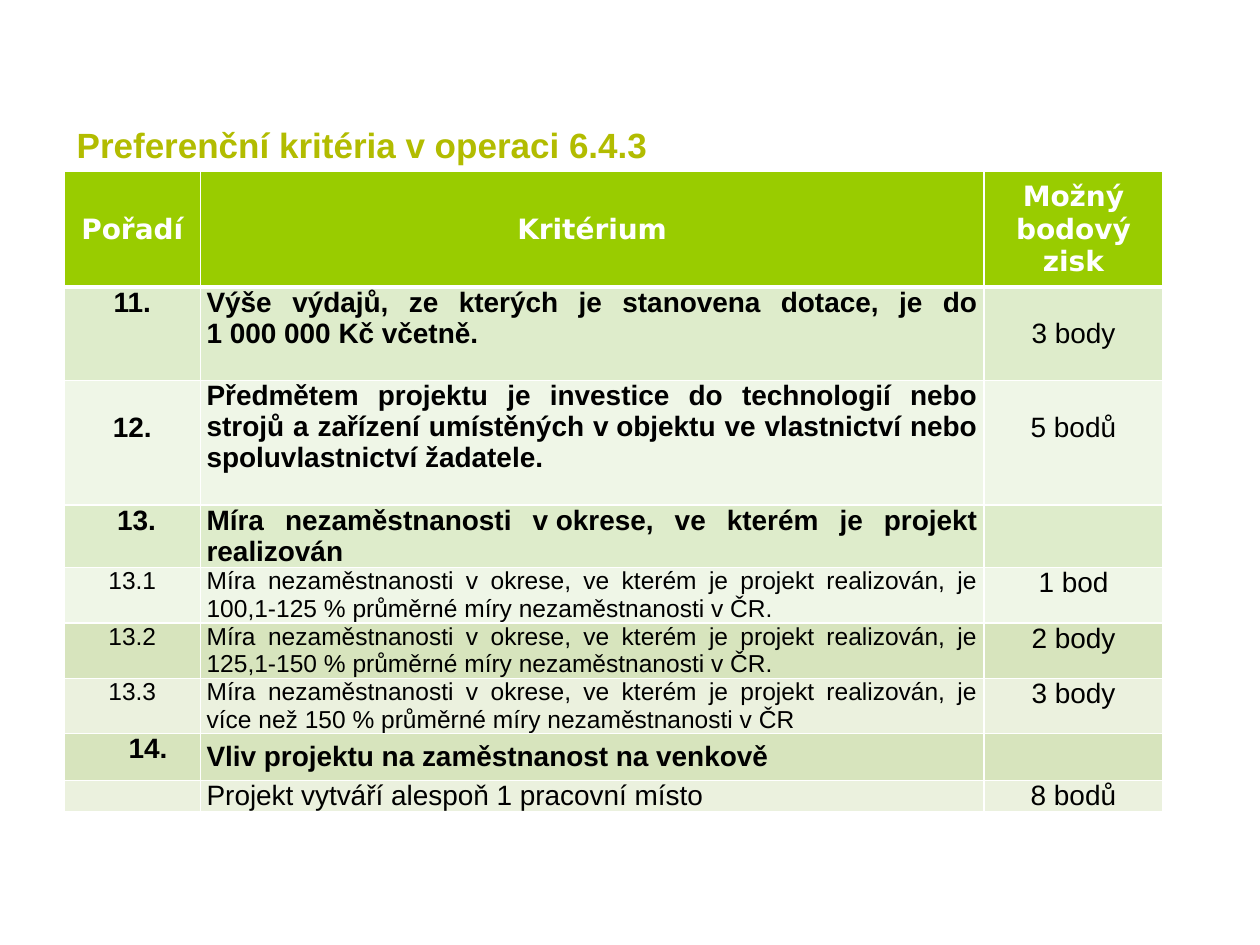
"""Build the slide listing the preference criteria of operation 6.4.3."""
from lxml import etree
from pptx import Presentation
from pptx.dml.color import RGBColor
from pptx.enum.text import MSO_ANCHOR, PP_ALIGN
from pptx.oxml.ns import qn
from pptx.util import Inches, Pt

LEFT, CENTER, JUSTIFY = PP_ALIGN.LEFT, PP_ALIGN.CENTER, PP_ALIGN.JUSTIFY
TOP, MIDDLE, BOTTOM = MSO_ANCHOR.TOP, MSO_ANCHOR.MIDDLE, MSO_ANCHOR.BOTTOM

BLACK = RGBColor(0x00, 0x00, 0x00)
WHITE = RGBColor(0xFF, 0xFF, 0xFF)
OLIVE = RGBColor(0xB2, 0xBC, 0x00)
GREEN = RGBColor(0x99, 0xCC, 0x00)
MINT = RGBColor(0xDE, 0xEC, 0xCB)
PALE_MINT = RGBColor(0xEF, 0xF6, 0xE7)
SAGE = RGBColor(0xD7, 0xE4, 0xBD)
PALE_SAGE = RGBColor(0xEB, 0xF1, 0xDE)

THIN, THICK = 0.91, 2.95
LINE_HEIGHT = 0.25
COLUMN_WIDTHS = (1.08, 6.22, 1.42)
HEADINGS = ("Pořadí", "Kritérium", "Možný bodový zisk")
HEADING_HEIGHT = 0.92

DISTRICT = "Míra nezaměstnanosti v okrese, ve kterém je projekt realizován, je "
MAIN = dict(number=dict(bold=True), criterion=dict(bold=True))
SUB = dict(number=dict(size=14), criterion=dict(size=14))
CRITERIA = (
    (0.74, MINT, ("11.", "Výše výdajů, ze kterých je stanovena dotace, je do "
                  "1\u00a0000\u00a0000 Kč včetně.", "3 body"),
     dict(MAIN, points=dict(top=LINE_HEIGHT))),
    (0.99, PALE_MINT, ("12.", "Předmětem projektu je investice do technologií nebo strojů "
                       "a zařízení umístěných v\u00a0objektu ve vlastnictví nebo "
                       "spoluvlastnictví žadatele.", "5 bodů"),
     dict(MAIN, number=dict(bold=True, top=LINE_HEIGHT), points=dict(top=LINE_HEIGHT))),
    (0.49, MINT, ("13.", "Míra nezaměstnanosti v\u00a0okrese, ve kterém je projekt "
                  "realizován", ""),
     dict(MAIN, number=dict(bold=True, align=LEFT, left=0.42))),
    (0.44, PALE_MINT, ("13.1", DISTRICT + "100,1-125 % průměrné míry nezaměstnanosti v ČR.",
                       "1 bod"), SUB),
    (0.44, SAGE, ("13.2", DISTRICT + "125,1-150 % průměrné míry nezaměstnanosti v ČR.",
                  "2 body"), SUB),
    (0.44, PALE_SAGE, ("13.3", DISTRICT + "více než 150\u00a0% průměrné míry "
                       "nezaměstnanosti v ČR", "3 body"), SUB),
    (0.37, SAGE, ("14.", "Vliv projektu na zaměstnanost na venkově", ""),
     dict(number=dict(bold=True, left=0.3), criterion=dict(bold=True, anchor=MIDDLE))),
    (0.24, PALE_SAGE, ("", "Projekt vytváří alespoň 1 pracovní místo", "8 bodů"), {}),
)


def write_text(frame, text, size=16, bold=False, color=BLACK, font="Arial",
               align=LEFT, spacing=None):
    """Write one formatted paragraph into a text frame."""
    para = frame.paragraphs[0]
    para.alignment = align
    if spacing:
        para.line_spacing = spacing
    if not text:
        etree.SubElement(para._p, qn("a:endParaRPr"), sz="1200")
        return
    span = para.add_run()
    span.text = text
    span.font.size, span.font.bold, span.font.name = Pt(size), bold, font
    span.font.color.rgb = color


class CriteriaSlide:
    """Hold the current slide and draw its title and table."""

    def __init__(self, deck):
        self.slide = deck.slides.add_slide(deck.slide_layouts[6])

    def title(self, text, left, top, width, height):
        box = self.slide.shapes.add_textbox(
            Inches(left), Inches(top), Inches(width), Inches(height))
        box.text_frame.word_wrap = True
        box.text_frame.vertical_anchor = BOTTOM
        write_text(box.text_frame, text, size=20, bold=True, color=OLIVE)

    def table(self, left, top, widths, heights):
        frame = self.slide.shapes.add_table(
            len(heights), len(widths), Inches(left), Inches(top),
            Inches(sum(widths)), Inches(sum(heights)))
        table = frame.table
        table.horz_banding = False
        for column, width in zip(table.columns, widths):
            column.width = Inches(width)
        for row, height in zip(table.rows, heights):
            row.height = Inches(height)
        return table

    def borders(self, cell, top, bottom):
        properties = cell._tc.get_or_add_tcPr()
        for side, width in (("L", THIN), ("R", THIN), ("T", top), ("B", bottom)):
            line = etree.SubElement(properties, qn(f"a:ln{side}"), w=str(int(Pt(width))))
            fill = etree.SubElement(line, qn("a:solidFill"))
            etree.SubElement(fill, qn("a:srgbClr"), val=str(WHITE))

    def cell(self, cell, text, fill, left=0.05, right=0.05, top=0, bottom=0,
             anchor=TOP, line_above=THIN, line_below=THIN, **style):
        self.borders(cell, line_above, line_below)
        cell.fill.solid()
        cell.fill.fore_color.rgb = fill
        cell.margin_left, cell.margin_right = Inches(left), Inches(right)
        cell.margin_top, cell.margin_bottom = Inches(top), Inches(bottom)
        cell.vertical_anchor = anchor
        write_text(cell.text_frame, text, **style)


def main():
    """Build and save the deck."""
    deck = Presentation()
    deck.slide_width, deck.slide_height = Inches(10), Inches(7.5)
    page = CriteriaSlide(deck)

    heights = [HEADING_HEIGHT] + [height for height, *_ in CRITERIA]
    table = page.table(0.51, 1.36, COLUMN_WIDTHS, heights)
    for column, heading in enumerate(HEADINGS):
        page.cell(table.cell(0, column), heading, GREEN, left=0.1, right=0.1,
                  top=0.05, bottom=0.05, anchor=MIDDLE, line_below=THICK, bold=True,
                  color=WHITE, font="DejaVu Sans", align=CENTER, spacing=1.01)

    columns = (("number", CENTER), ("criterion", JUSTIFY), ("points", CENTER))
    for row, (_, fill, texts, styles) in enumerate(CRITERIA, start=1):
        line_above = THICK if row == 1 else THIN
        for column, (text, (name, align)) in enumerate(zip(texts, columns)):
            style = {"align": align, **styles.get(name, {})}
            page.cell(table.cell(row, column), text, fill, line_above=line_above, **style)

    page.title("Preferenční kritéria v operaci 6.4.3", 0.51, 0.52, 8.82, 0.84)
    deck.save("out.pptx")


if __name__ == "__main__":
    main()
